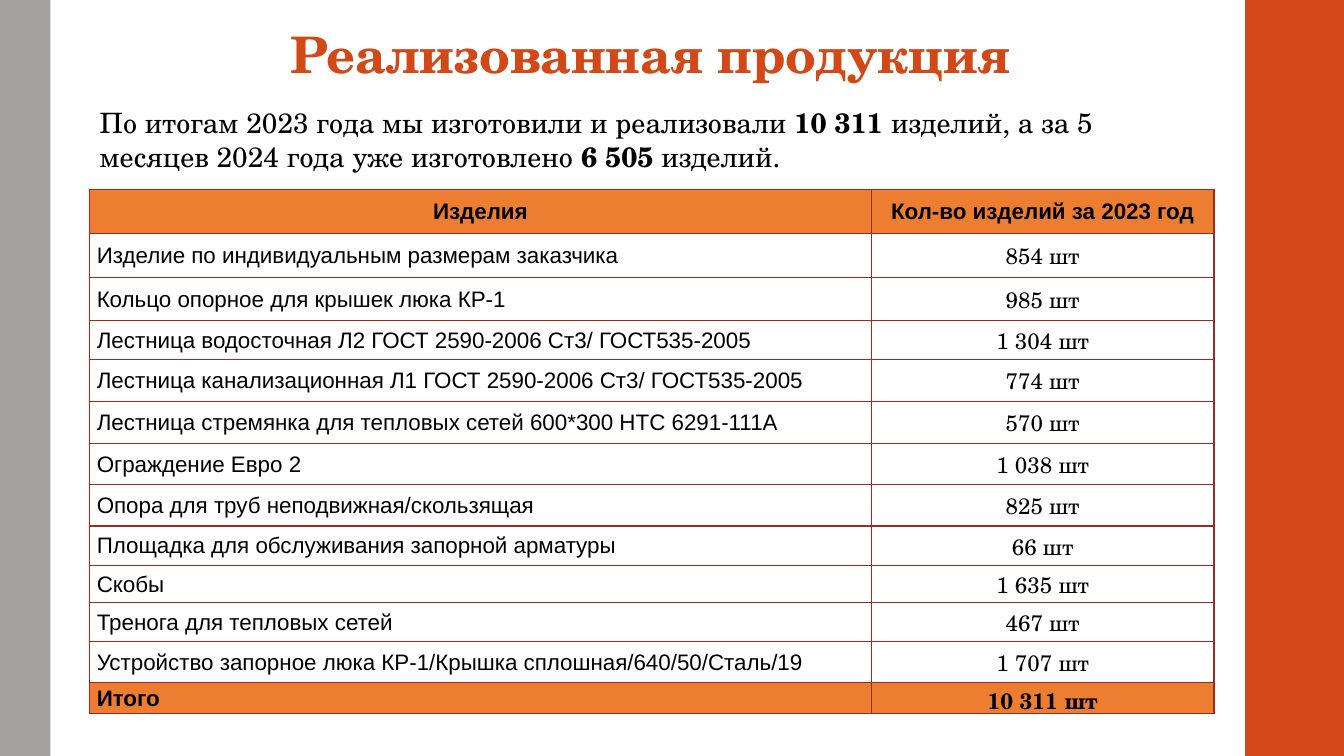
from lxml import etree
from pptx import Presentation
from pptx.dml.color import RGBColor
from pptx.enum.shapes import MSO_SHAPE
from pptx.enum.text import MSO_ANCHOR as ANCHOR, PP_ALIGN as ALIGN
from pptx.oxml import parse_xml
from pptx.oxml.ns import nsdecls, qn
from pptx.util import Inches, Pt

RUST = RGBColor(0xD3, 0x48, 0x17)
GRAY = RGBColor(0xA5, 0xA1, 0xA1)
ORANGE = RGBColor(0xED, 0x7D, 0x31)
BORDER = RGBColor(0x9B, 0x2D, 0x1F)
BLACK = RGBColor(0, 0, 0)
SERIF = "TeX Gyre Schola"
SANS = "Arial"

HEADER = ("Изделия", "Кол-во изделий за 2023 год")
PRODUCTS = [
    ("Изделие по индивидуальным размерам заказчика", "854 шт"),
    ("Кольцо опорное для крышек люка КР-1", "985 шт"),
    ("Лестница водосточная Л2 ГОСТ 2590-2006 Ст3/ ГОСТ535-2005", "1 304 шт"),
    ("Лестница канализационная Л1 ГОСТ 2590-2006 Ст3/ ГОСТ535-2005", "774 шт"),
    ("Лестница стремянка для тепловых сетей 600*300 НТС 6291-111А", "570 шт"),
    ("Ограждение Евро 2", "1 038 шт"),
    ("Опора для труб неподвижная/скользящая", "825 шт"),
    ("Площадка для обслуживания запорной арматуры", "66 шт"),
    ("Скобы", "1 635 шт"),
    ("Тренога для тепловых сетей", "467 шт"),
    ("Устройство запорное люка КР-1/Крышка сплошная/640/50/Сталь/19", "1 707 шт"),
]
TOTAL = ("Итого", "10 311 шт")
COL_WIDTHS = (7.75, 3.4)
ROW_HEIGHTS = (0.44, 0.43, 0.43, 0.39, 0.41, 0.42, 0.41, 0.41, 0.39, 0.37, 0.39, 0.4, 0.31)


def add_run(p, text, font=SERIF, size=20, color=BLACK, bold=False):
    """Append a formatted run to a paragraph."""
    r = p.add_run()
    r.text = text
    r.font.name, r.font.size, r.font.bold = font, Pt(size), bold
    r.font.color.rgb = color


class SlideBuilder:
    def __init__(self, prs):
        self.s = prs.slides.add_slide(prs.slide_layouts[5])

    def bar(self, left, width, color):
        sp = self.s.shapes.add_shape(MSO_SHAPE.RECTANGLE, Inches(left), 0, Inches(width), Inches(7.5))
        sp.shadow.inherit = False
        sp.fill.solid()
        sp.fill.fore_color.rgb = color
        sp.line.fill.background()

    def title(self, text, left, top, width, height):
        sp = self.s.shapes.title
        sp.left, sp.top, sp.width, sp.height = map(Inches, (left, top, width, height))
        tf = sp.text_frame
        tf.vertical_anchor = ANCHOR.TOP
        p = tf.paragraphs[0]
        p.alignment = ALIGN.CENTER
        add_run(p, text, size=36, color=RUST, bold=True)

    def text(self, runs, left, top, width, height):
        sp = self.s.shapes.add_textbox(*map(Inches, (left, top, width, height)))
        tf = sp.text_frame
        tf.word_wrap = True
        for text, bold in runs:
            add_run(tf.paragraphs[0], text, bold=bold)

    def border(self, cell):
        tc_pr = cell._tc.get_or_add_tcPr()
        for i, side in enumerate(("lnL", "lnR", "lnT", "lnB")):
            ln = parse_xml(f'<a:{side} {nsdecls("a")} w="{Pt(1)}"/>')
            fill = etree.SubElement(ln, qn("a:solidFill"))
            etree.SubElement(fill, qn("a:srgbClr"), val=str(BORDER))
            tc_pr.insert(i, ln)

    def cell(self, cell, text, font, bold, centered):
        cell.vertical_anchor = ANCHOR.MIDDLE
        cell.margin_left = Inches(0.01 if centered else 0.07)
        cell.margin_right = cell.margin_top = Inches(0.01)
        cell.margin_bottom = 0
        if bold:
            cell.fill.solid()
            cell.fill.fore_color.rgb = ORANGE
        else:
            cell.fill.background()
        self.border(cell)
        p = cell.text_frame.paragraphs[0]
        p.alignment = ALIGN.CENTER if centered else ALIGN.LEFT
        add_run(p, text, font=font, size=16, bold=bold)

    def table(self, rows, left, top):
        size = (sum(COL_WIDTHS), sum(ROW_HEIGHTS))
        frame = self.s.shapes.add_table(len(rows), 2, *map(Inches, (left, top, *size)))
        table = frame.table
        table.first_row = table.horz_banding = False
        for col, width in zip(table.columns, COL_WIDTHS):
            col.width = Inches(width)
        for row, height in zip(table.rows, ROW_HEIGHTS):
            row.height = Inches(height)
        for i, row in enumerate(rows):
            for j, text in enumerate(row):
                font = SERIF if i and j else SANS
                self.cell(table.cell(i, j), text, font,
                          bold=row in (HEADER, TOTAL), centered=i == 0 or j == 1)


def main():
    prs = Presentation()
    prs.slide_width, prs.slide_height = Inches(13.33), Inches(7.5)
    slide = SlideBuilder(prs)
    slide.bar(12.35, 0.98, RUST)
    slide.bar(0, 0.5, GRAY)
    slide.title("Реализованная продукция", 0.64, 0.18, 11.62, 0.71)
    slide.text([("По итогам 2023 года мы изготовили и реализовали ", False),
                ("10 311 ", True),
                ("изделий, а за 5 месяцев 2024 года уже изготовлено ", False),
                ("6 505", True),
                (" изделий.", False)], 0.89, 1, 10.35, 0.77)
    slide.table([HEADER, *PRODUCTS, TOTAL], 0.89, 1.88)
    prs.save("out.pptx")


if __name__ == "__main__":
    main()
